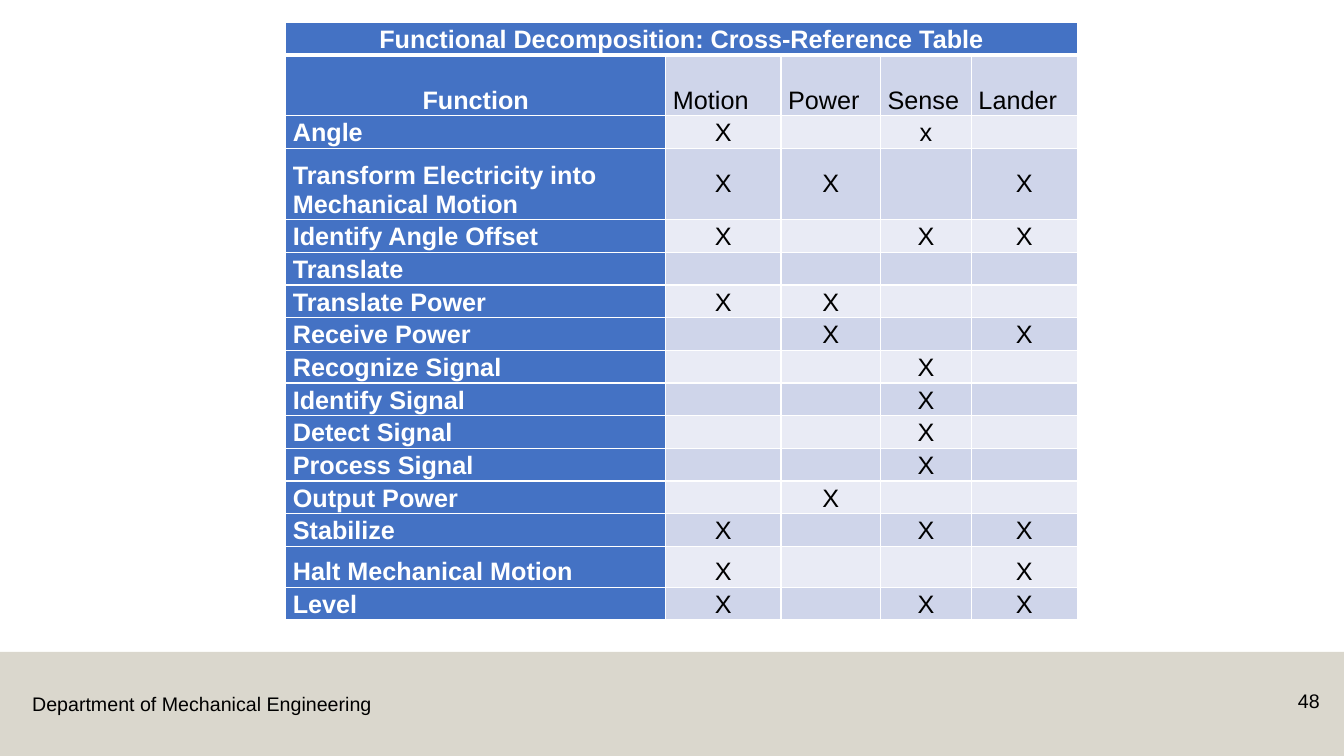
from lxml import etree
from pptx import Presentation
from pptx.dml.color import RGBColor
from pptx.enum import shapes, text
from pptx.oxml import ns
from pptx.util import Cm, Pt

WHITE = RGBColor(0xFF, 0xFF, 0xFF)
BLACK = RGBColor(0, 0, 0)
BLUE = RGBColor(0x44, 0x72, 0xC4)
DARK_BAND = RGBColor(0xCF, 0xD5, 0xEA)
LIGHT_BAND = RGBColor(0xE9, 0xEB, 0xF5)
SAND = RGBColor(0xB7, 0xB0, 0x9C)
FONT = "Arial"

LEFT, CENTER, RIGHT = text.PP_ALIGN.LEFT, text.PP_ALIGN.CENTER, text.PP_ALIGN.RIGHT
BOTTOM, MIDDLE = text.MSO_ANCHOR.BOTTOM, text.MSO_ANCHOR.MIDDLE

TITLE = "Functional Decomposition: Cross-Reference Table"
SUBSYSTEMS = ["Motion", "Power", "Sense", "Lander"]
COLUMN_WIDTHS = [9.58, 2.9, 2.51, 2.29, 2.67]
ROW_HEIGHT = 0.82
HEADING_HEIGHT = 1.53
TALL_ROWS = {"Transform Electricity into Mechanical Motion": 1.8,
             "Halt Mechanical Motion": 1.03}
# One mark per subsystem; "-" leaves the cell empty
FUNCTIONS = [
    ("Angle", "X-x-"),
    ("Transform Electricity into Mechanical Motion", "XX-X"),
    ("Identify Angle Offset", "X-XX"),
    ("Translate", "----"),
    ("Translate Power", "XX--"),
    ("Receive Power", "-X-X"),
    ("Recognize Signal", "--X-"),
    ("Identify Signal", "--X-"),
    ("Detect Signal", "--X-"),
    ("Process Signal", "--X-"),
    ("Output Power", "-X--"),
    ("Stabilize", "X-XX"),
    ("Halt Mechanical Motion", "X--X"),
    ("Level", "X-XX"),
]


def add_text(frame, words, size, color=BLACK, bold=False, align=LEFT):
    paragraph = frame.paragraphs[0]
    paragraph.alignment = align
    run = paragraph.add_run()
    run.text = words
    run.font.name, run.font.size = FONT, Pt(size)
    run.font.bold = bold
    run.font.color.rgb = color


def set_borders(cell, widths):
    """White borders; widths in points for left, right, top, bottom."""
    properties = cell._tc.get_or_add_tcPr()
    for place, (side, width) in enumerate(zip("LRTB", widths)):
        line = etree.Element(ns.qn(f"a:ln{side}"), w=str(Pt(width)))
        fill = etree.SubElement(line, ns.qn("a:solidFill"))
        etree.SubElement(fill, ns.qn("a:srgbClr"), val=str(WHITE))
        properties.insert(place, line)


def fill_cell(cell, words, fill, color=BLACK, bold=False, align=CENTER,
              anchor=BOTTOM, top=1, bottom=1):
    cell.fill.solid()
    cell.fill.fore_color.rgb = fill
    cell.margin_left = cell.margin_right = Cm(0.18)
    cell.margin_top = cell.margin_bottom = Cm(0.03)
    cell.vertical_anchor = anchor
    set_borders(cell, (1, 1, top, bottom))
    if words:
        add_text(cell.text_frame, words, 18, color, bold, align)
    else:
        # Keeps an empty cell from stretching its row
        etree.SubElement(cell.text_frame.paragraphs[0]._p,
                         ns.qn("a:endParaRPr"), sz="1400")


def add_cross_reference(slide, left, top):
    heights = [ROW_HEIGHT, HEADING_HEIGHT]
    heights += [TALL_ROWS.get(name, ROW_HEIGHT) for name, _ in FUNCTIONS]
    matrix = slide.shapes.add_table(
        len(heights), len(COLUMN_WIDTHS), Cm(left), Cm(top),
        Cm(sum(COLUMN_WIDTHS)), Cm(sum(heights))).table
    for column, width in zip(matrix.columns, COLUMN_WIDTHS):
        column.width = Cm(width)
    for row, height in zip(matrix.rows, heights):
        row.height = Cm(height)

    # Title row
    for column in range(len(COLUMN_WIDTHS)):
        fill_cell(matrix.cell(0, column), "" if column else TITLE, BLUE,
                  WHITE, bold=True, bottom=3)
    matrix.cell(0, 0).merge(matrix.cell(0, len(COLUMN_WIDTHS) - 1))

    # Column headings
    fill_cell(matrix.cell(1, 0), "Function", BLUE, WHITE, bold=True, top=3)
    for column, subsystem in enumerate(SUBSYSTEMS, 1):
        fill_cell(matrix.cell(1, column), subsystem, DARK_BAND, align=LEFT, top=3)

    # Functions and their marks
    for row, (function, marks) in enumerate(FUNCTIONS, 2):
        band = DARK_BAND if row % 2 else LIGHT_BAND
        anchor = MIDDLE if function.startswith("Transform") else BOTTOM
        fill_cell(matrix.cell(row, 0), function, BLUE, WHITE, bold=True, align=LEFT)
        for column, mark in enumerate(marks, 1):
            fill_cell(matrix.cell(row, column), mark.strip("-"), band, anchor=anchor)


def add_footer(slide, left, top, width, height):
    # Half-transparent band
    band = slide.shapes.add_shape(shapes.MSO_SHAPE.RECTANGLE, Cm(left), Cm(top),
                                  Cm(width), Cm(height))
    band.shadow.inherit = False
    band.line.fill.background()
    band.fill.solid()
    band.fill.fore_color.rgb = SAND
    tint = band._element.spPr.find(".//" + ns.qn("a:srgbClr"))
    etree.SubElement(tint, ns.qn("a:alpha"), val="50000")

    # Department name
    department = slide.shapes.add_textbox(Cm(left + 0.56), Cm(top + 0.89),
                                          Cm(9.12), Cm(0.86))
    department.text_frame.word_wrap = False
    add_text(department.text_frame, "Department of Mechanical Engineering", 14)

    # Page number
    page = slide.shapes.add_textbox(Cm(left + width - 2.31), Cm(top + 0.81),
                                    Cm(1.95), Cm(1.02))
    page.text_frame.word_wrap = True
    add_text(page.text_frame, "48", 14, align=RIGHT)


def main():
    deck = Presentation()
    deck.slide_width, deck.slide_height = Cm(33.87), Cm(19.05)
    slide = deck.slides.add_slide(deck.slide_layouts[6])
    add_footer(slide, 0, 16.43, 33.87, 2.62)
    add_cross_reference(slide, 7.2, 0.56)
    deck.save("out.pptx")


if __name__ == "__main__":
    main()
